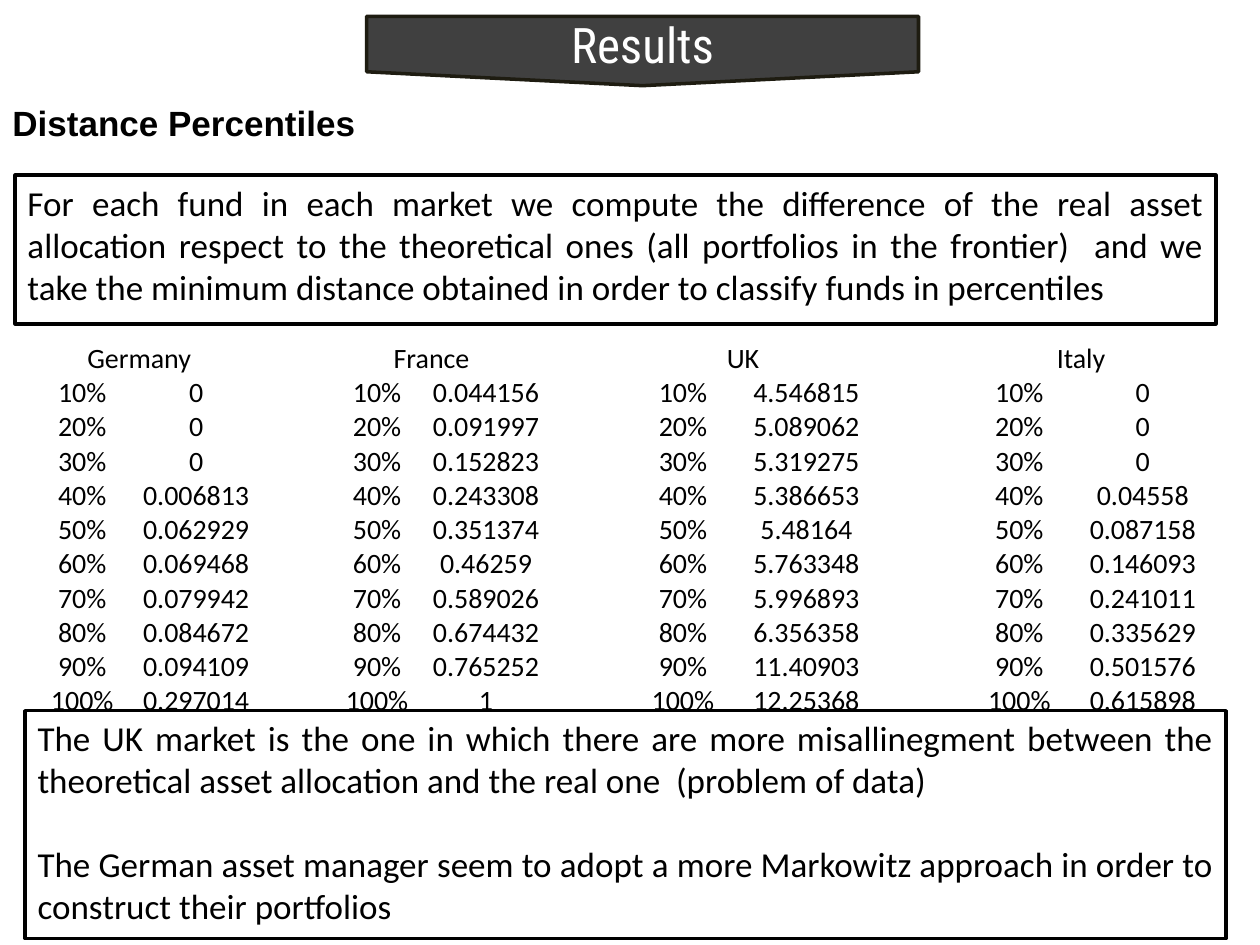
from pptx import Presentation
from pptx.dml.color import RGBColor
from pptx.enum.shapes import MSO_SHAPE as Shape
from pptx.enum.text import MSO_ANCHOR as Anchor, PP_ALIGN as Align
from pptx.util import Inches, Pt

COLORS = {"paper": "FFFFFF", "ink": "000000", "banner": "404040", "edge": "1E1C11"}

INTRO = [
    "For each fund in each market we compute the difference of the real asset "
    "allocation respect to the theoretical ones (all portfolios in the frontier)  "
    "and we take the minimum distance obtained in order to classify funds in percentiles",
]
FINDINGS = [
    "The UK market is the one in which there are more misallinegment between the "
    "theoretical asset allocation and the real one  (problem of data)",
    "The German asset manager seem to adopt a more Markowitz approach in order to "
    "construct their portfolios",
]

# Market header, left edge, width, distances from the 10th to the 100th percentile
MARKETS = [
    (["Germany"], 0.2, 1.81,
     ["0", "0", "0", "0.006813", "0.062929", "0.069468",
      "0.079942", "0.084672", "0.094109", "0.297014"]),
    (["France"], 2.56, 1.73,
     ["0.044156", "0.091997", "0.152823", "0.243308", "0.351374", "0.46259",
      "0.589026", "0.674432", "0.765252", "1"]),
    (["U", "K"], 4.93, 1.96,
     ["4.546815", "5.089062", "5.319275", "5.386653", "5.48164", "5.763348",
      "5.996893", "6.356358", "11.40903", "12.25368"]),
    (["Italy"], 7.6, 1.96,
     ["0", "0", "0", "0.04558", "0.087158", "0.146093",
      "0.241011", "0.335629", "0.501576", "0.615898"]),
]
TABLE_TOP, TABLE_HEIGHT = 2.71, 2.93


def color(name):
    return RGBColor.from_string(COLORS[name])


def paint(target, name):
    target.fill.solid()
    target.fill.fore_color.rgb = color(name)


def write(paragraph, text, size, font="Calibri", ink="ink", align=Align.LEFT, bold=False):
    paragraph.alignment = align
    run = paragraph.add_run()
    run.text = text
    formats = {"name": font, "size": Pt(size), "bold": bold}
    for attribute, value in formats.items():
        setattr(run.font, attribute, value)
    run.font.color.rgb = color(ink)


def add_panel(slide, place, kind=Shape.RECTANGLE, fill="paper", edge=None, anchor=Anchor.TOP):
    panel = slide.shapes.add_shape(kind, *map(Inches, place))
    panel.shadow.inherit = False
    paint(panel, fill)
    if edge:
        panel.line.color.rgb = color(edge)
        panel.line.width = Pt(2)
    else:
        panel.line.fill.background()
    panel.text_frame.word_wrap = True
    panel.text_frame.vertical_anchor = anchor
    return panel.text_frame


def add_comment(slide, place, statements):
    """Add a framed box of justified statements, one blank line's height apart."""
    frame = add_panel(slide, place, edge="ink")
    for index, statement in enumerate(statements):
        paragraph = frame.add_paragraph() if index else frame.paragraphs[0]
        if index:
            paragraph.space_before = Pt(24)
        write(paragraph, statement, 20, align=Align.JUSTIFY)


def fill_cell(cell, text, align=Align.CENTER):
    margins = ("margin_left", "margin_top", "margin_right", "margin_bottom")
    for attribute, value in {**dict.fromkeys(margins, 0),
                             "vertical_anchor": Anchor.BOTTOM}.items():
        setattr(cell, attribute, value)
    paint(cell, "paper")
    write(cell.text_frame.paragraphs[0], text, 16, align=align)


def add_market(slide, header, left, width, distances):
    row_count = len(distances) + 1
    place = map(Inches, (left, TABLE_TOP, width, TABLE_HEIGHT))
    table = slide.shapes.add_table(row_count, 2, *place).table
    table.first_row = table.horz_banding = False
    for row in table.rows:
        row.height = Inches(TABLE_HEIGHT / row_count)

    if len(header) == 1:
        table.cell(0, 0).merge(table.cell(0, 1))
        fill_cell(table.cell(0, 0), header[0])
    else:
        for column, align in enumerate((Align.RIGHT, Align.LEFT)):
            fill_cell(table.cell(0, column), header[column], align)

    for row, distance in enumerate(distances, start=1):
        fill_cell(table.cell(row, 0), f"{row * 10}%")
        fill_cell(table.cell(row, 1), distance)


def main():
    deck = Presentation()
    deck.slide_width, deck.slide_height = Inches(10), Inches(7.5)
    slide = deck.slides.add_slide(deck.slide_layouts[6])

    banner = add_panel(slide, (2.91, 0.13, 4.38, 0.55), Shape.FLOWCHART_OFFPAGE_CONNECTOR,
                       "banner", "edge", Anchor.MIDDLE)
    write(banner.paragraphs[0], "Results", 28, "Roboto Condensed", "paper", Align.CENTER)

    subtitle = add_panel(slide, (0, 0.76, 7.52, 0.44))
    write(subtitle.paragraphs[0], "Distance Percentiles", 20, "Arial", bold=True)

    for market in MARKETS:
        add_market(slide, *market)

    add_comment(slide, (0.2, 5.64, 9.53, 1.81), FINDINGS)
    add_comment(slide, (0.12, 1.39, 9.53, 1.18), INTRO)
    deck.save("out.pptx")


if __name__ == "__main__":
    main()
